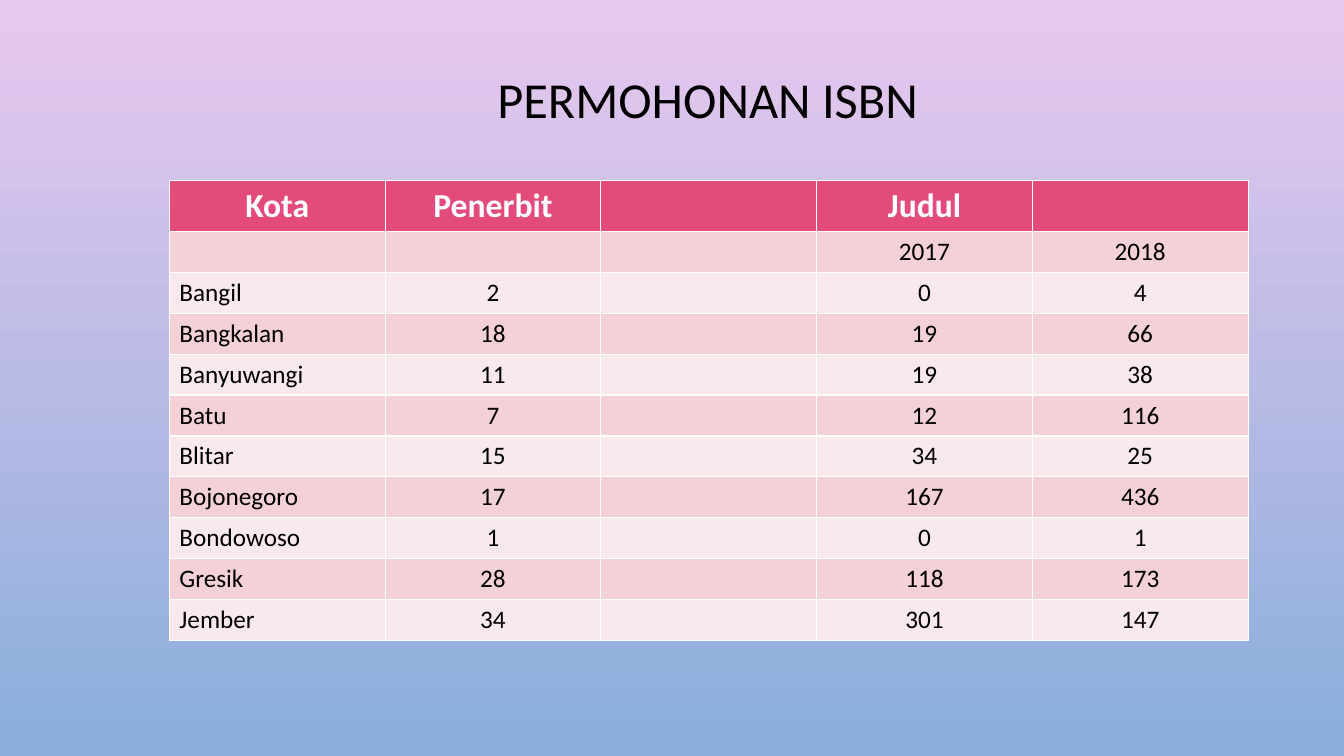
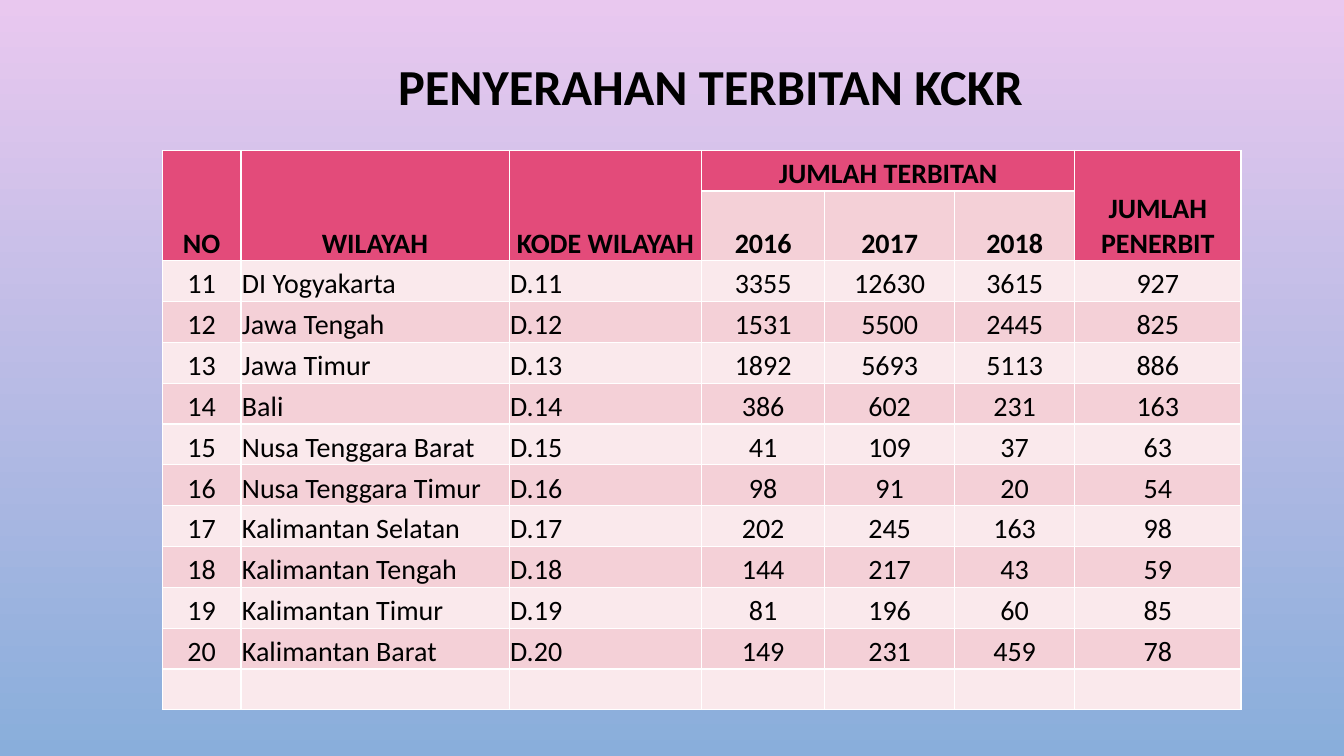
from pptx import Presentation
from pptx.dml.color import RGBColor
from pptx.enum.text import MSO_ANCHOR as Anchor, PP_ALIGN as Align
from pptx.util import Inches, Pt

COLORS = {
    "sky_top": "E9C8EF", "sky_bottom": "89AEDB",
    "header": "E34B7A", "band_dark": "F4D0D7", "band_light": "FAE9EC",
    "black": "000000", "white": "FFFFFF",
}
FONT = "Calibri"
TITLE_ONLY = 5

ISBN_ROWS = [
    ("Kota", "Penerbit", "", "Judul", ""),
    ("", "", "", "2017", "2018"),
    ("Bangil", 2, "", 0, 4),
    ("Bangkalan", 18, "", 19, 66),
    ("Banyuwangi", 11, "", 19, 38),
    ("Batu", 7, "", 12, 116),
    ("Blitar", 15, "", 34, 25),
    ("Bojonegoro", 17, "", 167, 436),
    ("Bondowoso", 1, "", 0, 1),
    ("Gresik", 28, "", 118, 173),
    ("Jember", 34, "", 301, 147),
]

DEPOSIT_HEADS = [
    ("NO", "WILAYAH", "KODE WILAYAH", "JUMLAH TERBITAN", "", "", "JUMLAH PENERBIT"),
    ("", "", "", "2016", "2017", "2018", ""),
]
FIRST_REGION = 11
REGIONS = [
    ("DI Yogyakarta", 3355, 12630, 3615, 927),
    ("Jawa Tengah", 1531, 5500, 2445, 825),
    ("Jawa Timur", 1892, 5693, 5113, 886),
    ("Bali", 386, 602, 231, 163),
    ("Nusa Tenggara Barat", 41, 109, 37, 63),
    ("Nusa Tenggara Timur", 98, 91, 20, 54),
    ("Kalimantan Selatan", 202, 245, 163, 98),
    ("Kalimantan Tengah", 144, 217, 43, 59),
    ("Kalimantan Timur", 81, 196, 60, 85),
    ("Kalimantan Barat", 149, 231, 459, 78),
]


def rgb(name):
    return RGBColor.from_string(COLORS[name])


def style_font(font, size, color="black", bold=False):
    for name, value in {"name": FONT, "size": Pt(size), "bold": bold}.items():
        setattr(font, name, value)
    font.color.rgb = rgb(color)


def paint_background(master):
    fill = master.background.fill
    fill.gradient()
    fill.gradient_angle = 270
    for stop, color in zip(fill.gradient_stops, ("sky_top", "sky_bottom")):
        stop.color.rgb = rgb(color)


def add_titled_page(deck, text, box, bold=False):
    page = deck.slides.add_slide(deck.slide_layouts[TITLE_ONLY])
    title = page.shapes.title
    for side, length in zip(("left", "top", "width", "height"), box):
        setattr(title, side, Inches(length))
    title.text_frame.vertical_anchor = Anchor.MIDDLE
    para = title.text_frame.paragraphs[0]
    para.alignment = Align.CENTER
    para.line_spacing = 0.9
    span = para.add_run()
    span.text = text
    style_font(span.font, 36, bold=bold)
    return page


def add_banded_table(page, rows, box, widths):
    """Fill the box with equal rows under one header row."""
    frame = page.shapes.add_table(len(rows), len(widths), *map(Inches, box))
    table = frame.table
    for column, width in zip(table.columns, widths):
        column.width = Inches(width)
    for index, row in enumerate(table.rows):
        band = "header" if index == 0 else ("band_light", "band_dark")[index % 2]
        for cell in row.cells:
            cell.fill.solid()
            cell.fill.fore_color.rgb = rgb(band)
    return table


def write_cell(cell, value, align, **look):
    if value == "":
        return
    para = cell.text_frame.paragraphs[0]
    para.alignment = align
    span = para.add_run()
    span.text = str(value)
    style_font(span.font, **look)


def build_isbn_page(deck):
    page = add_titled_page(deck, "PERMOHONAN ISBN", (2.08, 0.42, 9.88, 1.19))
    table = add_banded_table(page, ISBN_ROWS, (1.68, 1.79, 10.71, 4.46), [2.14] * 5)
    header_look = {"size": 24, "color": "white", "bold": True}
    for r, values in enumerate(ISBN_ROWS):
        look = header_look if r == 0 else {"size": 18}
        for c, value in enumerate(values):
            align = Align.LEFT if r > 0 and c == 0 else Align.CENTER
            write_cell(table.cell(r, c), value, align, **look)


def build_deposit_page(deck):
    page = add_titled_page(deck, "PENYERAHAN TERBITAN KCKR",
                           (1.72, 0.3, 10.66, 1.17), bold=True)
    body = [(number, region, f"D.{number}", *counts)
            for number, (region, *counts) in enumerate(REGIONS, FIRST_REGION)]
    rows = DEPOSIT_HEADS + body + [("",) * 7]
    table = add_banded_table(page, rows, (1.61, 1.49, 10.71, 5.27),
                             [0.78, 2.66, 1.91, 1.22, 1.29, 1.19, 1.65])

    # Headings over two rows, and one over the three years
    for c in (0, 1, 2, 6):
        table.cell(0, c).merge(table.cell(1, c))
    table.cell(0, 3).merge(table.cell(0, 5))

    cell_format = {"vertical_anchor": Anchor.BOTTOM, "margin_left": Inches(0.01),
                   "margin_top": Inches(0.01), "margin_right": Inches(0.01),
                   "margin_bottom": 0}
    for r, values in enumerate(rows):
        is_head = r < len(DEPOSIT_HEADS)
        for c, value in enumerate(values):
            cell = table.cell(r, c)
            if value != "":
                for name, setting in cell_format.items():
                    setattr(cell, name, setting)
            align = Align.LEFT if c in (1, 2) and not is_head else Align.CENTER
            write_cell(cell, value, align, size=20, bold=is_head)


def main():
    deck = Presentation()
    deck.slide_width, deck.slide_height = Inches(13.33), Inches(7.5)
    paint_background(deck.slide_master)
    build_isbn_page(deck)
    build_deposit_page(deck)
    deck.save("out.pptx")


if __name__ == "__main__":
    main()
